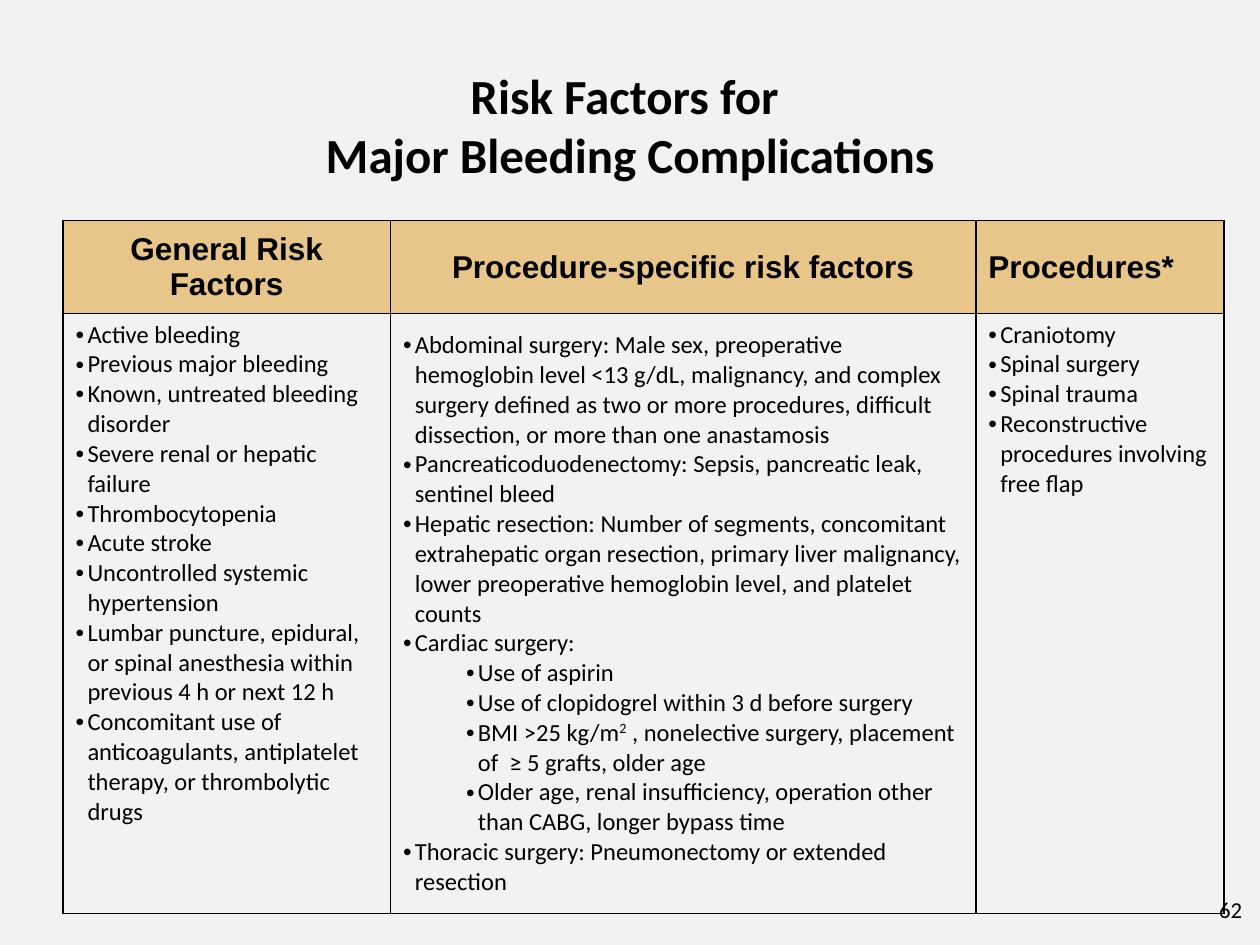
from lxml import etree
from pptx import Presentation
from pptx import util as u
from pptx.dml.color import RGBColor
from pptx.enum import text
from pptx.oxml.ns import qn

BLACK, PAPER, SAND = "000000", "F2F2F2", "E8C588"
INDENT = u.Cm(0.24)
SUB_INDENT = u.Cm(1.51)
CENTER = text.PP_ALIGN.CENTER
MIDDLE = text.MSO_ANCHOR.MIDDLE

# Heading, alignment, body anchor, width in cm; body entries are (level, text)
COLUMNS = [
    ("General Risk Factors", CENTER, text.MSO_ANCHOR.TOP, 6.6, [
        (0, "Active bleeding"),
        (0, "Previous major bleeding"),
        (0, "Known, untreated bleeding disorder"),
        (0, "Severe renal or hepatic failure"),
        (0, "Thrombocytopenia"),
        (0, "Acute stroke"),
        (0, "Uncontrolled systemic hypertension"),
        (0, "Lumbar puncture, epidural, or spinal anesthesia within previous "
            "4 h or next 12 h"),
        (0, "Concomitant use of anticoagulants, antiplatelet therapy, or "
            "thrombolytic drugs"),
    ]),
    ("Procedure-specific risk factors", CENTER, MIDDLE, 11.8, [
        (0, "Abdominal surgery: Male sex, preoperative hemoglobin level "
            "˂13 g/dL, malignancy, and complex surgery defined as two or more "
            "procedures, difficult dissection, or more than one anastamosis"),
        (0, "Pancreaticoduodenectomy: Sepsis, pancreatic leak, sentinel bleed"),
        (0, "Hepatic resection: Number of segments, concomitant extrahepatic "
            "organ resection, primary liver malignancy, lower preoperative "
            "hemoglobin level, and platelet counts"),
        (0, "Cardiac surgery:"),
        (1, "Use of aspirin"),
        (1, "Use of clopidogrel within 3 d before surgery"),
        (1, "BMI >25 kg/m^2^ , nonelective surgery, placement of  ≥ 5 grafts, "
            "older age"),
        (1, "Older age, renal insufficiency, operation other than CABG, longer "
            "bypass time"),
        (0, "Thoracic surgery: Pneumonectomy or extended resection"),
    ]),
    ("Procedures*", text.PP_ALIGN.LEFT, text.MSO_ANCHOR.TOP, 5.0, [
        (0, "Craniotomy"),
        (0, "Spinal surgery"),
        (0, "Spinal trauma"),
        (0, "Reconstructive procedures involving free flap"),
    ]),
]


def color(value):
    return RGBColor.from_string(value)


def place(shape, left, top, width, height):
    shape.left, shape.top = u.Cm(left), u.Cm(top)
    shape.width, shape.height = u.Cm(width), u.Cm(height)


def style(para, font, size, bold=False, align=text.PP_ALIGN.LEFT):
    para.alignment = align
    para.font.name, para.font.size = font, u.Pt(size)
    para.font.bold = bold
    para.font.color.rgb = color(BLACK)


def add_bullet(para, level):
    """Hang the paragraph on a round bullet."""
    para.level = level
    props = para._p.get_or_add_pPr()
    props.set("marL", str(SUB_INDENT if level else INDENT))
    props.set("indent", str(-INDENT))
    etree.SubElement(props, qn("a:buFont"), typeface="Arial")
    etree.SubElement(props, qn("a:buChar"), char="•")


def add_spans(para, words):
    """Write the words; a part between carets is superscript."""
    for index, part in enumerate(words.split("^")):
        span = para.add_run()
        span.text = part
        if index % 2:
            span._r.get_or_add_rPr().set("baseline", "30000")


def add_borders(cell):
    props = cell._tc.get_or_add_tcPr()
    for side in ("lnL", "lnR", "lnT", "lnB"):
        line = etree.SubElement(props, qn(f"a:{side}"), w=str(u.Pt(1)))
        fill = etree.SubElement(line, qn("a:solidFill"))
        etree.SubElement(fill, qn("a:srgbClr"), val=BLACK)


def fill_heading(cell, words, align):
    add_borders(cell)
    cell.fill.solid()
    cell.fill.fore_color.rgb = color(SAND)
    cell.vertical_anchor = MIDDLE
    para = cell.text_frame.paragraphs[0]
    para.text = words
    style(para, "Arial", 18, True, align)
    if align == CENTER:
        para.space_before = u.Pt(3.6)


def fill_list(cell, entries, anchor):
    add_borders(cell)
    cell.fill.background()
    cell.vertical_anchor = anchor
    frame = cell.text_frame
    for index, (level, words) in enumerate(entries):
        para = frame.add_paragraph() if index else frame.paragraphs[0]
        add_spans(para, words)
        style(para, "Calibri", 14)
        add_bullet(para, level)


def add_title(slide):
    title = slide.shapes.title
    place(title, 1.27, 0.76, 22.86, 3.18)
    frame = title.text_frame
    frame.text = "Risk Factors for \vMajor Bleeding Complications"
    frame.vertical_anchor = text.MSO_ANCHOR.BOTTOM
    frame.margin_top = frame.margin_bottom = u.Cm(0.25)
    frame.auto_size = text.MSO_AUTO_SIZE.NONE
    style(frame.paragraphs[0], "Calibri", 28, True, CENTER)


def add_risk_table(slide):
    frame = slide.shapes.add_table(2, len(COLUMNS), u.Cm(1.27), u.Cm(4.45),
                                   u.Cm(23.4), u.Cm(13.97))
    table = frame.table
    table.first_row = table.horz_banding = False
    table.rows[0].height, table.rows[1].height = u.Cm(1.87), u.Cm(12.1)
    for index, (heading, align, anchor, width, entries) in enumerate(COLUMNS):
        table.columns[index].width = u.Cm(width)
        fill_heading(table.cell(0, index), heading, align)
        fill_list(table.cell(1, index), entries, anchor)


def add_page_number(slide):
    box = slide.shapes.add_textbox(u.Cm(23.77), u.Cm(17.6), u.Cm(1.52), u.Cm(1.45))
    frame = box.text_frame
    frame.word_wrap = True
    frame.vertical_anchor = MIDDLE
    frame.text = "62"
    style(frame.paragraphs[0], "Calibri", 13, align=text.PP_ALIGN.RIGHT)


def main():
    deck = Presentation()
    deck.slide_width, deck.slide_height = u.Cm(25.4), u.Cm(19.05)
    slide = deck.slides.add_slide(deck.slide_layouts[5])
    slide.background.fill.solid()
    slide.background.fill.fore_color.rgb = color(PAPER)
    add_page_number(slide)
    add_title(slide)
    add_risk_table(slide)
    deck.save("out.pptx")


if __name__ == "__main__":
    main()
